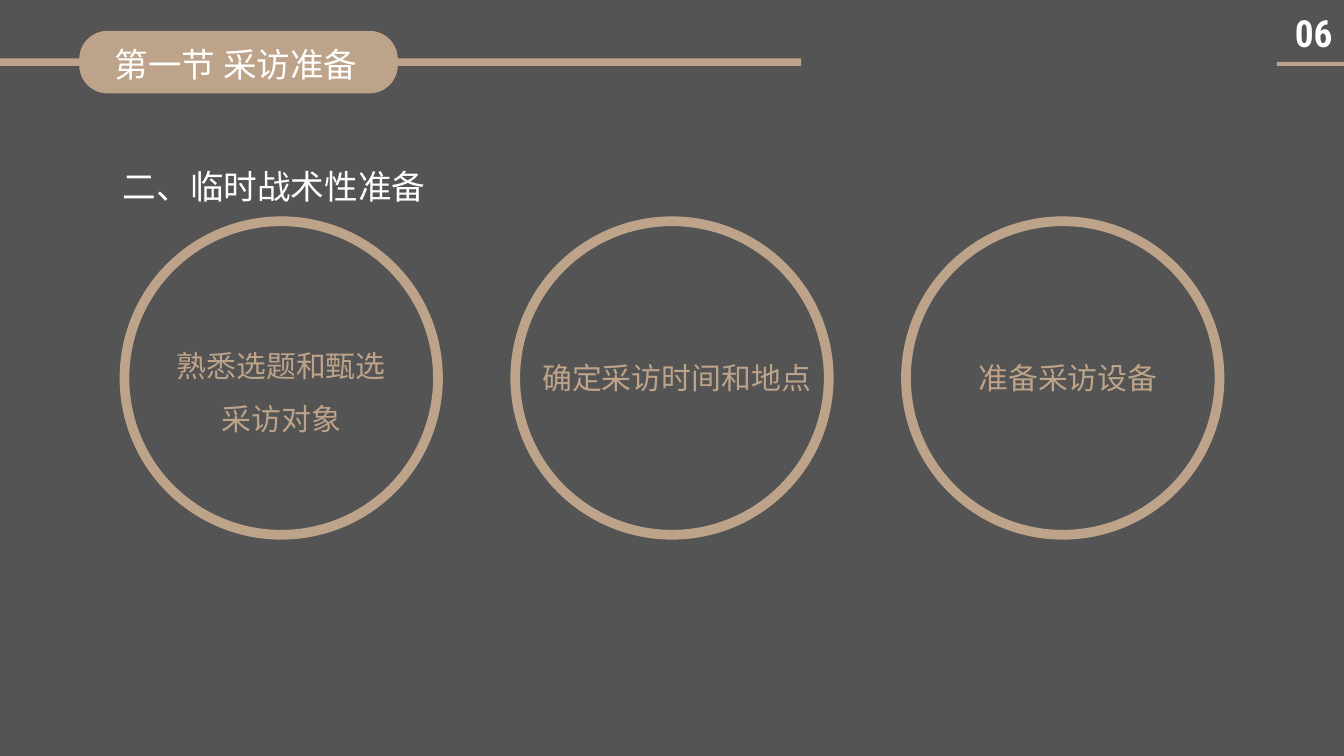
from pptx import Presentation
from pptx.dml.color import RGBColor
from pptx.enum.shapes import MSO_SHAPE as Shape
from pptx.enum.text import MSO_AUTO_SIZE as AutoSize, PP_ALIGN as Align
from pptx.util import Inches, Pt

COLORS = {"background": "545454", "accent": "BDA389", "light": "FFFFFF"}
CHINESE = "Noto Sans CJK SC"
NUMERALS = "Roboto Condensed"
TOPICS = [
    ("熟悉选题和甄选采访对象", 3.57, 1.59, 0),
    ("确定采访时间和地点", 5.12, 1.21, 0.87),
    ("准备采访设备", 3.77, 1.21, 0.87),
]


def add_filled(page, kind, left, top, width, height, adjustment=None):
    shape = page.shapes.add_shape(
        kind, Inches(left), Inches(top), Inches(width), Inches(height))
    shape.shadow.inherit = False
    shape.fill.solid()
    shape.fill.fore_color.rgb = RGBColor.from_string(COLORS["accent"])
    shape.line.fill.background()
    if adjustment is not None:
        shape.adjustments[0] = adjustment
    return shape


def add_text(page, text, left, top, width, height, size, color="light",
             font=CHINESE, bold=False, align=None, spacing=None,
             indent=0, inset=True, wrap=True):
    box = page.shapes.add_textbox(
        Inches(left), Inches(top), Inches(width), Inches(height))
    frame = box.text_frame
    frame.text = text
    frame.word_wrap = wrap
    frame.auto_size = AutoSize.SHAPE_TO_FIT_TEXT
    if not inset:
        frame.margin_left = frame.margin_right = 0
        frame.margin_top = frame.margin_bottom = 0
    para = frame.paragraphs[0]
    para.alignment = align
    para.line_spacing = spacing
    properties = para._p.get_or_add_pPr()
    if indent:
        properties.set("marL", "0")
        properties.set("indent", str(Inches(indent)))
    span = para.runs[0]
    span.font.size = Pt(size)
    span.font.name = font
    span.font.bold = bold
    span.font.color.rgb = RGBColor.from_string(COLORS[color])
    east_asian = span.font._element.makeelement(
        "{http://schemas.openxmlformats.org/drawingml/2006/main}ea",
        {"typeface": font})
    span.font._element.append(east_asian)
    return box


def add_header(page, left, top, width, height):
    add_filled(page, Shape.RECTANGLE, left, top + 0.41, width, 0.11)
    add_filled(page, Shape.ROUNDED_RECTANGLE,
               left + 1.21, top, 4.74, height, 0.45)
    add_text(page, "第一节 采访准备", left + 1.64, top + 0.14, 5.81, 0.71, 36)


def add_page_number(page, left, top, width, height):
    add_filled(page, Shape.RECTANGLE, left, top + height - 0.06, width, 0.06)
    add_text(page, "06", left + 0.17, top, 0.81, 0.77, 40,
             font=NUMERALS, bold=True)


def add_topics(page, left, top, width, diameter):
    step = (width - diameter) / (len(TOPICS) - 1)
    for index, (text, label_width, label_height, indent) in enumerate(TOPICS):
        ring_left = left + index * step
        add_filled(page, Shape.DONUT, ring_left, top, diameter, diameter, 0.03)
        shift = -0.34 if indent else 0
        add_text(page, text,
                 ring_left + (diameter - label_width) / 2 + shift,
                 top + (diameter - label_height) / 2 + 0.02,
                 label_width, label_height, 32, color="accent",
                 align=Align.LEFT if indent else Align.CENTER,
                 spacing=1.5, indent=indent, wrap=not indent)


def main():
    deck = Presentation()
    deck.slide_width = Inches(20)
    deck.slide_height = Inches(11.25)
    page = deck.slides.add_slide(deck.slide_layouts[6])
    page.background.fill.solid()
    page.background.fill.fore_color.rgb = RGBColor.from_string(
        COLORS["background"])
    add_text(page, "二、临时战术性准备", 1.83, 2.17, 15.67, 0.83, 36,
             spacing=1.5, inset=False)
    add_page_number(page, 19, 0.1, 1, 0.88)
    add_header(page, -0.03, 0.46, 11.95, 0.93)
    add_topics(page, 1.78, 3.22, 16.44, 4.81)
    deck.save("out.pptx")


if __name__ == "__main__":
    main()
